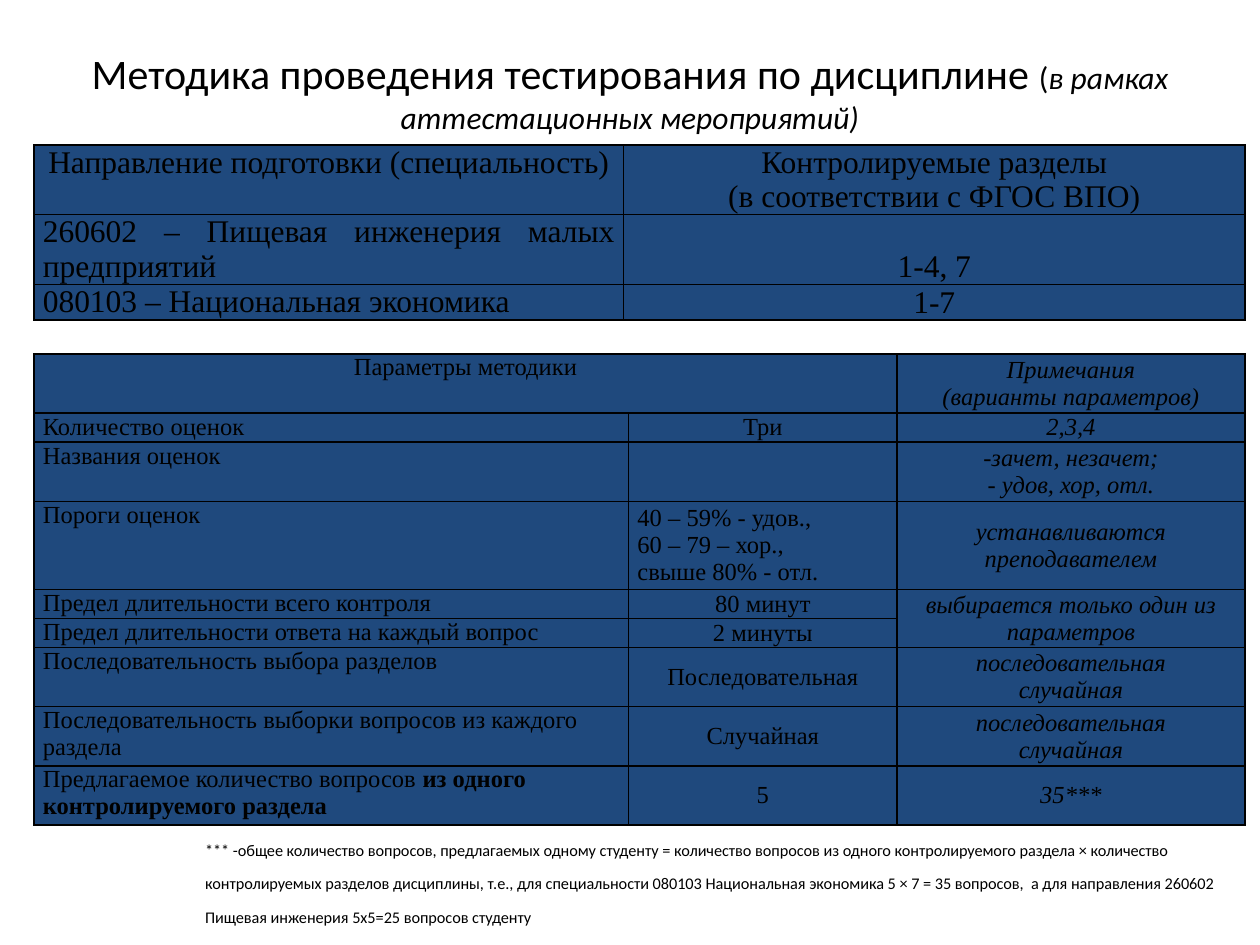
from lxml import etree
from pptx import Presentation
from pptx.dml.color import RGBColor
from pptx.enum import text as t
from pptx.oxml.ns import qn
from pptx.util import Inches, Pt

NAVY, BLACK = "1F497D", "000000"
LEFT, MID, JUST = t.PP_ALIGN.LEFT, t.PP_ALIGN.CENTER, t.PP_ALIGN.JUSTIFY
TOP, CENTER, BOTTOM = (t.MSO_ANCHOR.TOP, t.MSO_ANCHOR.MIDDLE,
                       t.MSO_ANCHOR.BOTTOM)

TITLE = "Методика проведения тестирования по дисциплине "
FIELDS = [
    ("Направление подготовки (специальность)",
     "Контролируемые разделы\n(в соответствии с ФГОС ВПО)"),
    ("260602 – Пищевая инженерия малых предприятий", "1-4, 7"),
    ("080103 – Национальная экономика", "1-7"),
]
PARAMS = [
    ("Параметры методики", "", "Примечания\n(варианты параметров)"),
    ("Количество оценок", "Три", "2,3,4"),
    ("Названия оценок", "", "-зачет, незачет;\n- удов, хор, отл."),
    ("Пороги оценок",
     "40 – 59% - удов., \n60 – 79 – хор.,\nсвыше 80% - отл.",
     "устанавливаются преподавателем"),
    ("Предел длительности всего контроля", "80 минут",
     "выбирается только один из параметров"),
    ("Предел длительности ответа на каждый вопрос", "2 минуты", ""),
    ("Последовательность выбора разделов", "Последовательная",
     "последовательная\nслучайная"),
    ("Последовательность выборки вопросов из каждого раздела", "Случайная",
     "последовательная\nслучайная"),
    ("Предлагаемое количество вопросов ", "5", "35***"),
]
NOTE = ("*** -общее количество вопросов, предлагаемых одному студенту = "
        "количество вопросов из одного контролируемого раздела × количество "
        "контролируемых разделов дисциплины, т.е., для специальности 080103 "
        "Национальная экономика 5 × 7 = 35 вопросов,  а для направления "
        "260602 Пищевая инженерия 5х5=25 вопросов студенту")


def color(value):
    return RGBColor.from_string(value)


def style(para, size, name, align, italic=None):
    para.alignment = align
    font = para.font
    font.size, font.name, font.italic = Pt(size), name, italic
    font.color.rgb = color(BLACK)


def add_border(cell):
    props = cell._tc.get_or_add_tcPr()
    for side in ("lnL", "lnR", "lnT", "lnB"):
        line = etree.SubElement(props, qn("a:" + side), w=str(Pt(1)))
        fill = etree.SubElement(line, qn("a:solidFill"))
        etree.SubElement(fill, qn("a:srgbClr"), val=BLACK)


def fill_cell(cell, words, size, align, anchor, italic=None):
    add_border(cell)
    cell.fill.solid()
    cell.fill.fore_color.rgb = color(NAVY)
    cell.margin_left = cell.margin_right = Inches(0.07)
    cell.margin_top = cell.margin_bottom = 0
    cell.vertical_anchor = anchor
    cell.text = words
    for para in cell.text_frame.paragraphs:
        style(para, size, "Times New Roman", align, italic)


def add_grid(slide, top, cols, rows):
    """Add an empty table with the given column widths and row heights."""
    frame = slide.shapes.add_table(
        len(rows), len(cols), Inches(0.27), Inches(top),
        Inches(sum(cols)), Inches(sum(rows)))
    table = frame.table
    table.first_row = table.horz_banding = False
    for col, width in zip(table.columns, cols):
        col.width = Inches(width)
    for row, height in zip(table.rows, rows):
        row.height = Inches(height)
    return table


def add_title(slide):
    title = slide.shapes.title
    title.left, title.top = Inches(0.5), Inches(0.3)
    title.width, title.height = Inches(9), Inches(1.25)
    frame = title.text_frame
    frame.auto_size = t.MSO_AUTO_SIZE.NONE
    frame.vertical_anchor = CENTER
    para = frame.paragraphs[0]
    style(para, 24, "Calibri", MID)
    parts = [(TITLE, 24, False), ("(", 18, False),
             ("в рамках аттестационных мероприятий)", 18, True)]
    for words, size, italic in parts:
        run = para.add_run()
        run.text = words
        run.font.size, run.font.italic = Pt(size), italic
    para.add_line_break()


def add_fields(slide):
    table = add_grid(slide, 1.15, [4.68, 4.93], [0.55, 0.55, 0.28])
    for r, (field, parts) in enumerate(FIELDS):
        fill_cell(table.cell(r, 0), field, 18, JUST if r else MID, TOP)
        fill_cell(table.cell(r, 1), parts, 18, MID, BOTTOM if r else TOP)


def add_params(slide):
    low, high = 0.23, 0.47
    table = add_grid(slide, 2.81, [4.72, 2.13, 2.76],
                     [high, low, high, 0.7, low, low, high, high, high])
    for r, (name, value, note) in enumerate(PARAMS):
        fill_cell(table.cell(r, 0), name, 14, LEFT if r else MID, TOP)
        fill_cell(table.cell(r, 1), value, 14,
                  JUST if "\n" in value else MID, CENTER)
        fill_cell(table.cell(r, 2), note, 14, MID, CENTER, True)
    table.cell(0, 0).merge(table.cell(0, 1))
    table.cell(4, 2).merge(table.cell(5, 2))
    last = table.cell(len(PARAMS) - 1, 0).text_frame.paragraphs[0]
    run = last.add_run()
    run.text = "из одного контролируемого раздела"
    run.font.bold = True


def add_note(slide):
    box = slide.shapes.add_textbox(
        Inches(1.53), Inches(6.59), Inches(8.47), Inches(0.73))
    frame = box.text_frame
    frame.word_wrap = True
    frame.auto_size = t.MSO_AUTO_SIZE.SHAPE_TO_FIT_TEXT
    para = frame.paragraphs[0]
    style(para, 16, "Calibri", LEFT)
    run = para.add_run()
    run.text = NOTE
    run.font.size = Pt(16)
    run._r.get_or_add_rPr().set("baseline", "30000")


def main():
    deck = Presentation()
    deck.slide_width, deck.slide_height = Inches(10), Inches(7.5)
    slide = deck.slides.add_slide(deck.slide_layouts[5])
    add_title(slide)
    add_fields(slide)
    add_params(slide)
    add_note(slide)
    deck.save("out.pptx")


if __name__ == "__main__":
    main()
